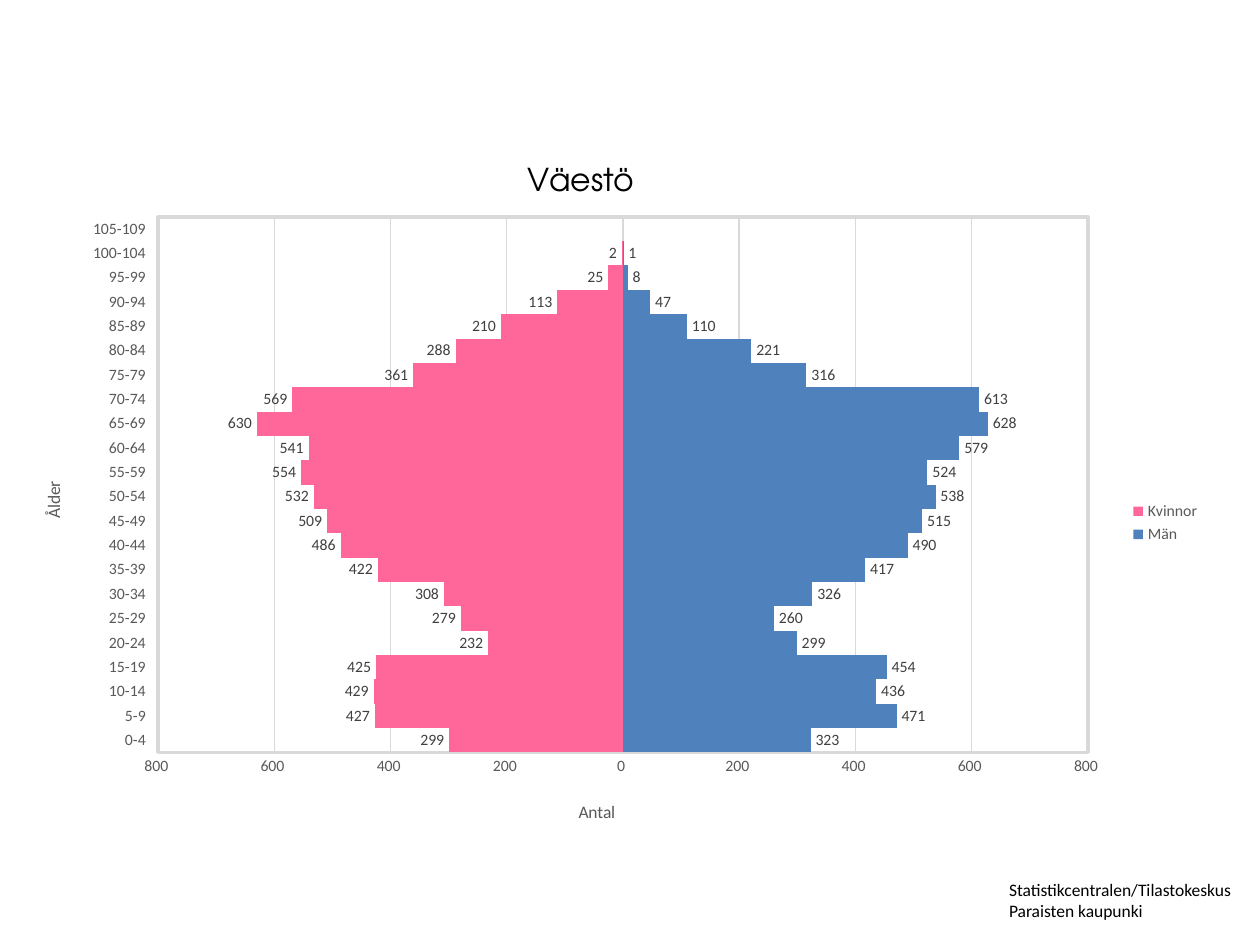
from dataclasses import dataclass

from lxml.etree import SubElement
from pptx import Presentation
from pptx.chart.data import CategoryChartData
from pptx.dml.color import RGBColor
from pptx.enum.chart import XL_CHART_TYPE as ChartType
from pptx.enum.chart import XL_LABEL_POSITION as LabelPosition
from pptx.enum.chart import XL_LEGEND_POSITION as LegendPosition
from pptx.enum.chart import XL_TICK_LABEL_POSITION as TickLabels
from pptx.enum.chart import XL_TICK_MARK as TickMark
from pptx.enum.text import MSO_ANCHOR as Anchor
from pptx.enum.text import MSO_AUTO_SIZE as AutoSize
from pptx.enum.text import PP_ALIGN as Align
from pptx.oxml import parse_xml
from pptx.oxml.ns import nsdecls, qn
from pptx.util import Inches, Pt


@dataclass(frozen=True)
class Theme:
    body_font: str = "Calibri"
    title_font: str = "TeX Gyre Adventor"
    ink: str = "000000"
    muted: str = "595959"
    value_ink: str = "404040"
    grid: str = "D9D9D9"
    men: str = "4F81BD"
    women: str = "FF6699"
    title_size: float = 18
    body_size: float = 10
    chart_size: float = 9


THEME = Theme()
MEN = [323, 471, 436, 454, 299, 260, 326, 417, 490, 515, 538,
       524, 579, 628, 613, 316, 221, 110, 47, 8, 1, None]
WOMEN = [299, 427, 429, 425, 232, 279, 308, 422, 486, 509, 532,
         554, 541, 630, 569, 361, 288, 210, 113, 25, 2, None]
AGE_GROUPS = [f"{age}-{age + 4}" for age in range(0, 110, 5)]
UNSIGNED = "#,##0_ ;#,##0"


def style(font, size, color, name=THEME.body_font):
    font.name = name
    font.size = Pt(size)
    font.bold = False
    font.color.rgb = RGBColor.from_string(color)


def place_part(part, **fractions):
    layout = part.find(qn("c:layout"))
    if layout is None:
        layout = parse_xml(f"<c:layout {nsdecls('c')}/>")
        overlay = part.find(qn("c:overlay"))
        if overlay is None:
            part.insert(0, layout)
        else:
            overlay.addprevious(layout)
    manual = SubElement(layout, qn("c:manualLayout"))
    if part.tag == qn("c:plotArea"):
        SubElement(manual, qn("c:layoutTarget")).set("val", "inner")
    for key in fractions:
        if key in "xy":
            SubElement(manual, qn(f"c:{key}Mode")).set("val", "edge")
    for key, fraction in fractions.items():
        SubElement(manual, qn(f"c:{key}")).set("val", str(fraction))


def format_axis(axis, caption, rotation, x, y):
    axis.major_tick_mark = axis.minor_tick_mark = TickMark.NONE
    axis.format.line.fill.background()
    style(axis.tick_labels.font, THEME.chart_size, THEME.muted)
    axis_title = axis.axis_title
    frame = axis_title.text_frame
    frame.text = caption
    style(frame.paragraphs[0].font, THEME.body_size, THEME.muted)
    body = frame._txBody.find(qn("a:bodyPr"))
    body.set("rot", str(rotation * 60000))
    body.set("vert", "horz")
    place_part(axis_title._element, x=x, y=y)


def format_series(series, color, number_format):
    series.invert_if_negative = False
    series.format.fill.solid()
    series.format.fill.fore_color.rgb = RGBColor.from_string(color)
    labels = series.data_labels
    labels.show_value = True
    labels.position = LabelPosition.OUTSIDE_END
    labels.number_format = number_format
    labels.number_format_is_linked = False
    style(labels.font, THEME.chart_size, THEME.value_ink)


def add_pyramid(slide, *box):
    population = CategoryChartData()
    population.categories = AGE_GROUPS
    population.add_series("Män", MEN)
    population.add_series("Kvinnor", [n and -n for n in WOMEN])
    chart = slide.shapes.add_chart(ChartType.BAR_CLUSTERED, *box, population).chart
    chart.has_title = False
    style(chart.font, THEME.body_size, THEME.ink)

    bars = chart.plots[0]
    bars.gap_width = 0
    bars.overlap = 100
    bars.vary_by_categories = False
    men, women = bars.series
    format_series(men, THEME.men, "General")
    format_series(women, THEME.women, UNSIGNED)

    ages, counts = chart.category_axis, chart.value_axis
    format_axis(ages, "Ålder", -90, 0.02, 0.43)
    ages.tick_label_position = TickLabels.LOW
    format_axis(counts, "Antal", 0, 0.47, 0.93)
    counts.minimum_scale, counts.maximum_scale = -800, 800
    counts.major_unit = 200
    counts.tick_labels.number_format = UNSIGNED + r"\ "
    counts.tick_labels.number_format_is_linked = False
    counts.has_major_gridlines = True
    grid = counts.major_gridlines.format.line
    grid.width = Pt(0.75)
    grid.color.rgb = RGBColor.from_string(THEME.grid)

    chart.has_legend = True
    legend = chart.legend
    legend.position = LegendPosition.RIGHT
    legend.include_in_layout = False
    style(legend.font, THEME.chart_size, THEME.muted)
    place_part(legend._element, x=0.93, y=0.46, w=0.07, h=0.08)

    plot_area = chart._chartSpace.chart.plotArea
    place_part(plot_area, x=0.12, y=0.02, w=0.78, h=0.84)
    plot_area.append(parse_xml(
        f'<c:spPr {nsdecls("c", "a")}><a:noFill/><a:ln w="{Pt(2)}"><a:solidFill>'
        f'<a:srgbClr val="{THEME.grid}"/></a:solidFill></a:ln></c:spPr>'))


def add_heading(slide, left, top, width, height):
    heading = slide.shapes.title
    heading.left, heading.top, heading.width, heading.height = left, top, width, height
    frame = heading.text_frame
    frame.text = "Väestö"
    frame.vertical_anchor = Anchor.TOP
    frame.auto_size = AutoSize.SHAPE_TO_FIT_TEXT
    frame.word_wrap = True
    frame.paragraphs[0].alignment = Align.LEFT
    style(frame.paragraphs[0].font, THEME.title_size, THEME.ink, THEME.title_font)


def add_source_note(slide, *box):
    frame = slide.shapes.add_textbox(*box).text_frame
    frame.word_wrap = True
    frame.auto_size = AutoSize.SHAPE_TO_FIT_TEXT
    frame.text = "Statistikcentralen/Tilastokeskus\vParaisten kaupunki"
    style(frame.paragraphs[0].font, THEME.body_size, THEME.ink)


def main():
    deck = Presentation()
    deck.slide_width, deck.slide_height = Inches(10), Inches(7.5)
    slide = deck.slides.add_slide(deck.slide_layouts[5])
    add_source_note(slide, Inches(7.91), Inches(6.93), Inches(2.02), Inches(0.44))
    add_pyramid(slide, Inches(0.12), Inches(1.62), Inches(9.46), Inches(5.06))
    add_heading(slide, Inches(4.09), Inches(1.22), Inches(1.51), Inches(0.4))
    deck.save("out.pptx")


if __name__ == "__main__":
    main()
